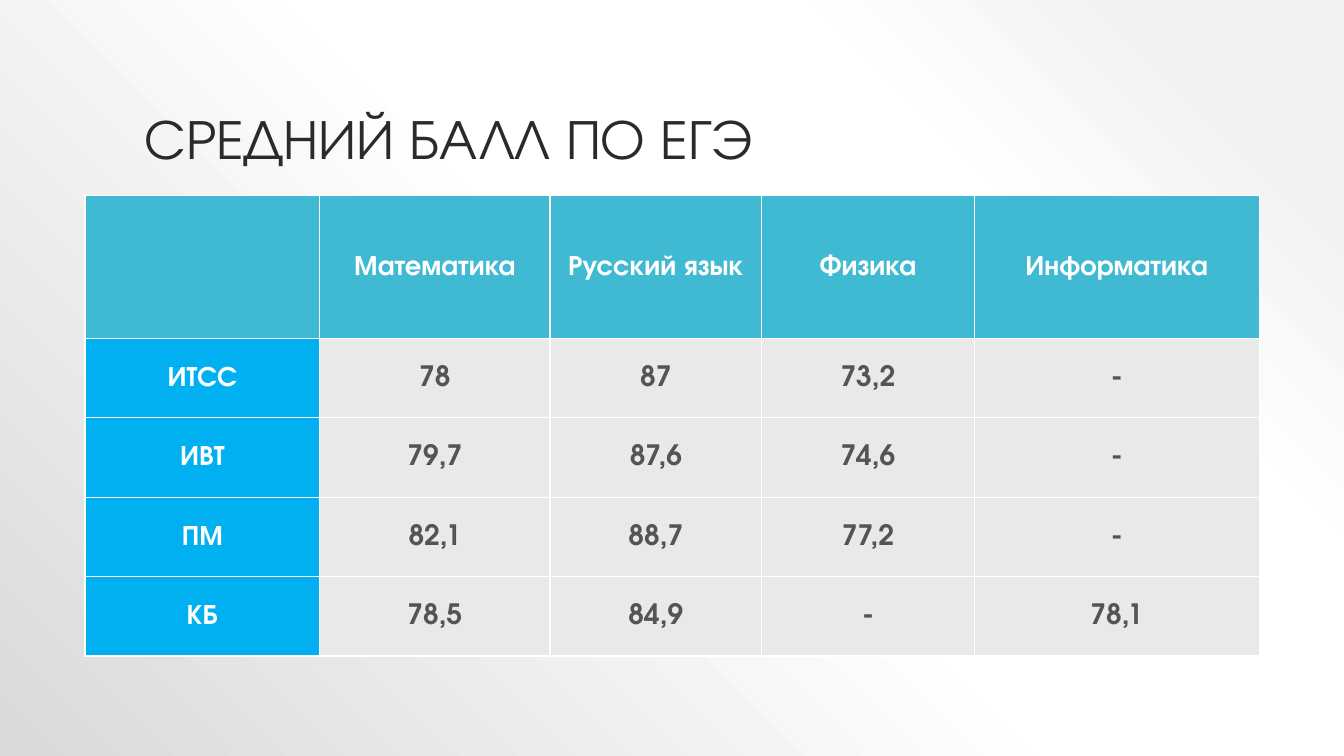
from dataclasses import dataclass

from lxml import etree
from pptx import Presentation
from pptx import util as u
from pptx.dml.color import RGBColor
from pptx.enum import text
from pptx.oxml.ns import qn


@dataclass(frozen=True)
class Theme:
    font: str = "TeX Gyre Adventor"
    title_size: int = 40
    table_size: int = 20
    title: str = "2A2A2A"
    header_fill: str = "40BAD2"
    label_fill: str = "00B0F0"
    value_fill: str = "E9E9E9"
    light_text: str = "FFFFFF"
    dark_text: str = "545454"
    border: str = "FFFFFF"
    background: tuple = ((10, "F2F2F2"), (28, "FFFFFF"), (48, "FFFFFF"), (100, "D9D9D9"))


def add_xml(parent, tag, **attributes):
    values = {name: str(value) for name, value in attributes.items()}
    return etree.SubElement(parent, qn(tag), values)


class SlideBuilder:
    def __init__(self, slide, theme):
        self.slide = slide
        self.theme = theme

    def set_font(self, paragraph, size, color, bold=False):
        formats = {"name": self.theme.font, "size": u.Pt(size), "bold": bold}
        for run in paragraph.runs:
            for name, value in formats.items():
                setattr(run.font, name, value)
            run.font.color.rgb = RGBColor.from_string(color)

    def background(self):
        """Radial gradient that starts in the top right corner."""
        self.slide.background.fill.gradient()
        gradient = next(self.slide.element.iter(qn("a:gradFill")))
        for child in list(gradient):
            gradient.remove(child)
        stops = add_xml(gradient, "a:gsLst")
        for position, color in self.theme.background:
            stop = add_xml(stops, "a:gs", pos=position * 1000)
            add_xml(stop, "a:srgbClr", val=color)
        circle = add_xml(gradient, "a:path", path="circle")
        add_xml(circle, "a:fillToRect", l=100000, b=100000)

    def title(self, words, left, top, width, height):
        shape = self.slide.shapes.title
        box = {"left": left, "top": top, "width": width, "height": height}
        for name, value in box.items():
            setattr(shape, name, u.Cm(value))
        frame = shape.text_frame
        frame.text = words
        frame.word_wrap = True
        frame.auto_size = text.MSO_AUTO_SIZE.NONE
        frame.vertical_anchor = text.MSO_ANCHOR.BOTTOM
        paragraph = frame.paragraphs[0]
        paragraph.alignment = text.PP_ALIGN.LEFT
        paragraph.line_spacing = 0.9
        self.set_font(paragraph, self.theme.title_size, self.theme.title)

    def borders(self, cell):
        properties = cell._tc.get_or_add_tcPr()
        for index, side in enumerate(("a:lnL", "a:lnR", "a:lnT", "a:lnB")):
            line = etree.Element(qn(side), w=str(u.Pt(1)))
            fill = add_xml(line, "a:solidFill")
            add_xml(fill, "a:srgbClr", val=self.theme.border)
            properties.insert(index, line)

    def cell(self, cell, words, fill, color):
        cell.text = words
        formats = {
            "vertical_anchor": text.MSO_ANCHOR.MIDDLE,
            "margin_left": u.Cm(0.03),
            "margin_right": u.Cm(0.03),
            "margin_top": u.Cm(0.03),
            "margin_bottom": 0,
        }
        for name, value in formats.items():
            setattr(cell, name, value)
        cell.fill.solid()
        cell.fill.fore_color.rgb = RGBColor.from_string(fill)
        paragraph = cell.text_frame.paragraphs[0]
        paragraph.alignment = text.PP_ALIGN.CENTER
        self.set_font(paragraph, self.theme.table_size, color, bold=True)
        self.borders(cell)

    def table(self, rows, left, top, widths, heights):
        box = [u.Cm(value) for value in (left, top, sum(widths), sum(heights))]
        table = self.slide.shapes.add_table(len(rows), len(widths), *box).table
        for column, width in zip(table.columns, widths):
            column.width = u.Cm(width)
        for row, height in zip(table.rows, heights):
            row.height = u.Cm(height)
        theme = self.theme
        for r, row in enumerate(rows):
            for c, words in enumerate(row):
                if r == 0:
                    style = theme.header_fill, theme.light_text
                elif c == 0:
                    style = theme.label_fill, theme.light_text
                else:
                    style = theme.value_fill, theme.dark_text
                self.cell(table.cell(r, c), words, *style)


SCORES = [
    ("", "Математика", "Русский язык", "Физика", "Информатика"),
    ("ИТСС", "78", "87", "73,2", "-"),
    ("ИВТ", "79,7", "87,6", "74,6", "-"),
    ("ПМ", "82,1", "88,7", "77,2", "-"),
    ("КБ", "78,5", "84,9", "-", "78,1"),
]


def main():
    presentation = Presentation()
    presentation.slide_width = u.Cm(33.87)
    presentation.slide_height = u.Cm(19.05)
    title_only = presentation.slide_layouts[5]
    builder = SlideBuilder(presentation.slides.add_slide(title_only), Theme())

    # Background and heading
    builder.background()
    builder.title("СРЕДНИЙ БАЛЛ ПО ЕГЭ", 3.39, 0.76, 27.1, 3.68)

    # Average scores by programme and subject
    widths = [5.92, 5.8, 5.34, 5.35, 7.19]
    heights = [3.6] + [2] * 4
    builder.table(SCORES, 2.14, 4.93, widths, heights)

    presentation.save("out.pptx")


if __name__ == "__main__":
    main()
